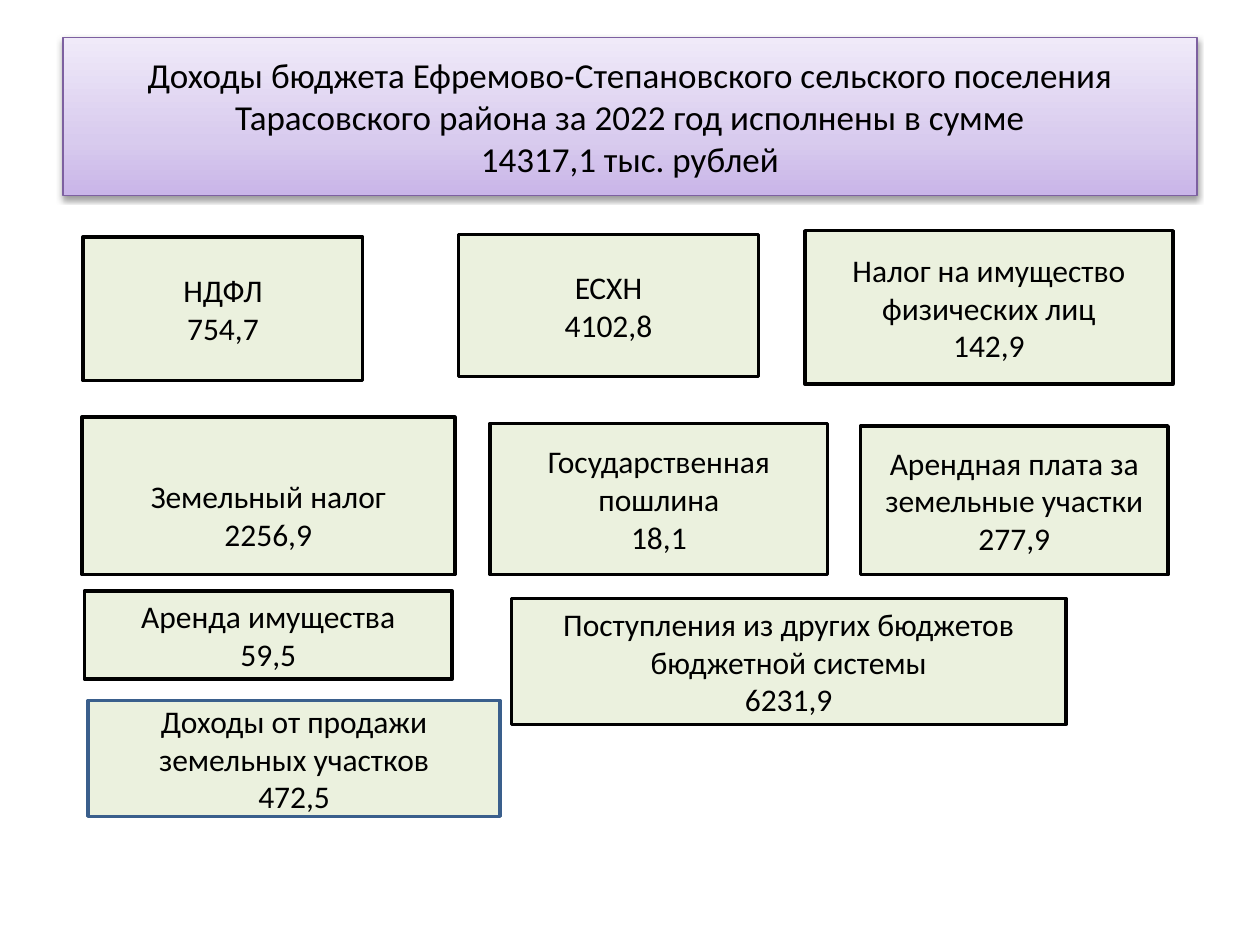
from dataclasses import dataclass

from lxml.etree import SubElement
from pptx import Presentation
from pptx.dml.color import RGBColor as Color
from pptx.enum.shapes import MSO_SHAPE as Shape
from pptx.enum.text import MSO_ANCHOR as Anchor, MSO_AUTO_SIZE as AutoSize, PP_ALIGN as Align
from pptx.oxml.ns import qn
from pptx.util import Pt


@dataclass(frozen=True)
class Theme:
    font: str = "Calibri"
    title_size: float = 20
    body_size: float = 18
    text: str = "000000"
    box_fill: str = "EBF1DE"
    box_line: str = "000000"
    sale_line: str = "3A5F8C"
    title_line: str = "7D60A0"
    title_stops: tuple = ((0, "C9B5E8"), (35, "D8CBEE"), (100, "F0EAF9"))


THEME = Theme()


@dataclass(frozen=True)
class Income:
    name: str
    amount: str
    left: float
    top: float
    width: float
    height: float
    line: str = THEME.box_line
    lowered: float = 0


INCOMES = [
    Income("НДФЛ", "754,7", 47.5, 135.4, 159.8, 82),
    Income("ЕСХН", "4102,8", 262, 133.9, 171.4, 81.4),
    Income("Налог на имущество физических лиц", "142,9", 460, 131.8, 210.2, 87.8),
    Income("Земельный налог", "2256,9", 46.8, 238.3, 213.1, 90, lowered=22),
    Income("Государственная пошлина", "18,1", 280, 241.9, 193, 86.4),
    Income("Арендная плата за земельные участки", "277,9", 491.8, 243.4, 175.7, 85),
    Income("Поступления из других бюджетов бюджетной системы", "6231,9", 292.3, 342, 316.8, 72),
    Income("Аренда имущества", "59,5", 48.2, 337.7, 210.2, 50.4),
    Income("Доходы от продажи земельных участков", "472,5", 50.4, 400.3, 235.4, 66.2,
           line=THEME.sale_line),
]


def write_text(box, lines: list[str], size: float) -> None:
    frame = box.text_frame
    frame.text = "\n".join(lines)
    frame.word_wrap = True
    frame.auto_size = AutoSize.NONE
    frame.vertical_anchor = Anchor.MIDDLE
    for para in frame.paragraphs:
        para.alignment = Align.CENTER
        para.font.name = THEME.font
        para.font.size = Pt(size)
        para.font.color.rgb = Color.from_string(THEME.text)


def set_line(box, color: str, width: float) -> None:
    box.line.color.rgb = Color.from_string(color)
    box.line.width = Pt(width)


def add_color(parent, color: str):
    return SubElement(parent, qn("a:srgbClr"), val=color)


def fill_title(title) -> None:
    title.fill.gradient()
    title.fill.gradient_angle = 90
    stops = title.element.spPr.find(".//" + qn("a:gsLst"))
    for stop in list(stops):
        stops.remove(stop)
    for position, color in THEME.title_stops:
        add_color(SubElement(stops, qn("a:gs"), pos=str(position * 1000)), color)


def add_shadow(box) -> None:
    box.shadow.inherit = False
    effects = box.element.spPr.find(qn("a:effectLst"))
    shadow = SubElement(effects, qn("a:outerShdw"), blurRad=str(Pt(3.1)),
                        dist=str(Pt(1.6)), dir="5400000", rotWithShape="0")
    SubElement(add_color(shadow, "000000"), qn("a:alpha"), val="38000")


def format_title(title) -> None:
    title.left, title.top, title.width, title.height = Pt(36), Pt(21.6), Pt(648), Pt(90)
    write_text(title, ["Доходы бюджета Ефремово-Степановского сельского поселения "
                       "Тарасовского района за 2022 год исполнены в сумме"
                       "\v14317,1 тыс. рублей"], THEME.title_size)
    fill_title(title)
    set_line(title, THEME.title_line, 0.75)
    add_shadow(title)


def add_income(page, income: Income) -> None:
    box = page.shapes.add_shape(Shape.RECTANGLE, Pt(income.left), Pt(income.top),
                                Pt(income.width), Pt(income.height))
    box.shadow.inherit = False
    box.fill.solid()
    box.fill.fore_color.rgb = Color.from_string(THEME.box_fill)
    set_line(box, income.line, 2)
    write_text(box, [income.name, income.amount], THEME.body_size)
    box.text_frame.margin_top = Pt(3.6 + income.lowered)


def main() -> None:
    deck = Presentation()
    deck.slide_width, deck.slide_height = Pt(720), Pt(540)
    page = deck.slides.add_slide(deck.slide_layouts.get_by_name("Title Only"))
    format_title(page.shapes.title)
    for income in INCOMES:
        add_income(page, income)
    deck.save("out.pptx")


if __name__ == "__main__":
    main()
